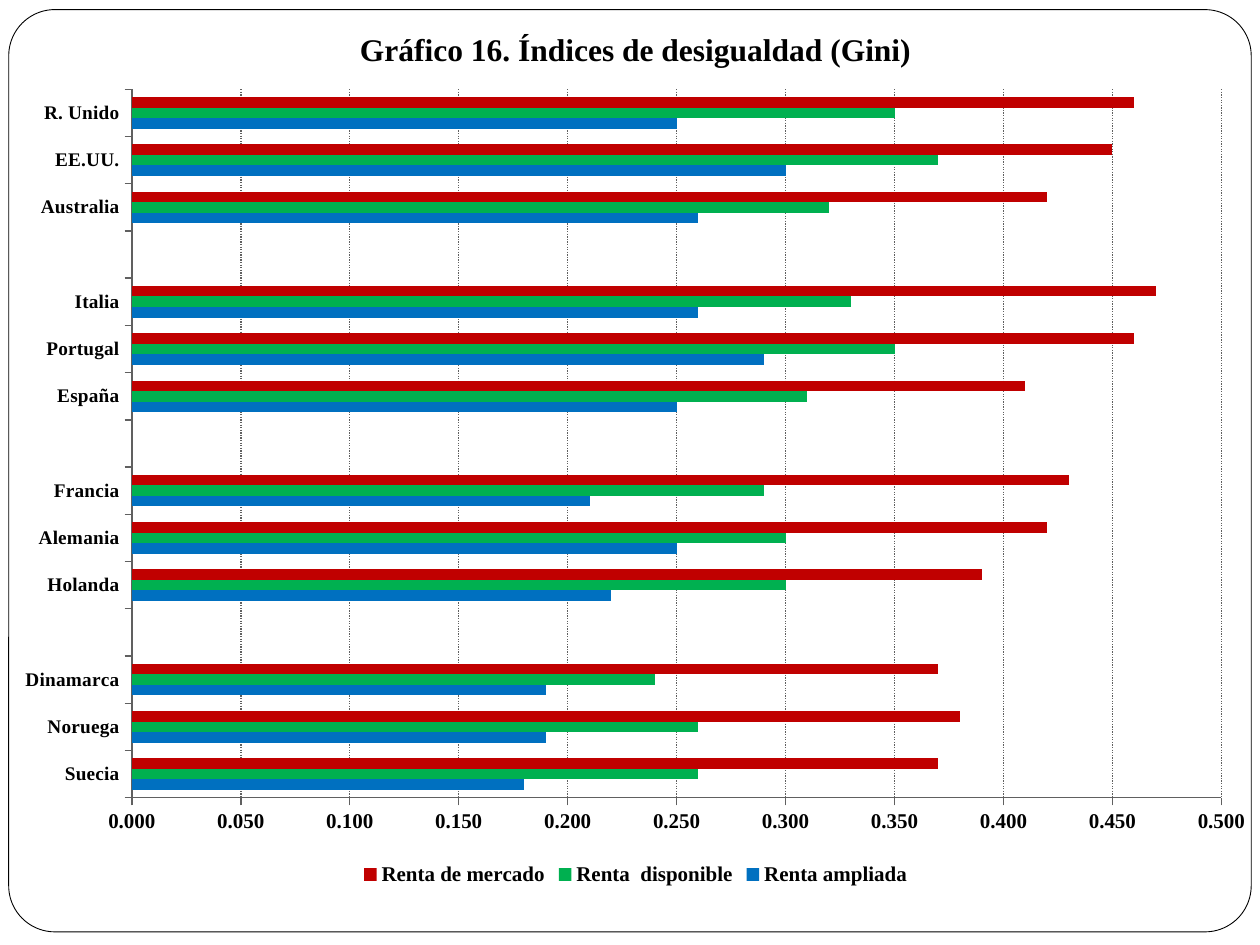
from lxml import etree
from pptx import Presentation
from pptx.chart.data import CategoryChartData
from pptx.dml.color import RGBColor
from pptx.enum.chart import XL_CHART_TYPE, XL_LEGEND_POSITION, XL_TICK_MARK
from pptx.enum.dml import MSO_LINE
from pptx.enum.shapes import MSO_SHAPE
from pptx.oxml.ns import qn
from pptx.util import Pt

TITLE = "Gráfico 16. Índices de desigualdad (Gini)"
FONT = "Times New Roman"
SERIES = [
    ("Renta ampliada", "0070C0"),
    ("Renta  disponible", "00B050"),
    ("Renta de mercado", "C00000"),
]
COUNTRIES = [
    ("Suecia", 0.18, 0.26, 0.37),
    ("Noruega", 0.19, 0.26, 0.38),
    ("Dinamarca", 0.19, 0.24, 0.37),
    ("", None, None, None),
    ("Holanda", 0.22, 0.3, 0.39),
    ("Alemania", 0.25, 0.3, 0.42),
    ("Francia", 0.21, 0.29, 0.43),
    ("", None, None, None),
    ("España", 0.25, 0.31, 0.41),
    ("Portugal", 0.29, 0.35, 0.46),
    ("Italia", 0.26, 0.33, 0.47),
    ("", None, None, None),
    ("Australia", 0.26, 0.32, 0.42),
    ("EE.UU.", 0.3, 0.37, 0.45),
    ("R. Unido", 0.25, 0.35, 0.46),
]
PLOT_LEFT, PLOT_TOP, PLOT_WIDTH, PLOT_HEIGHT = Pt(75.4), Pt(51), Pt(622.6), Pt(405)
CHART_WIDTH, CHART_HEIGHT = Pt(726.5), Pt(509)


def color(hex_code):
    """Return the colour of a hex string."""
    return RGBColor.from_string(hex_code)


def style_font(font, size, bold=True):
    """Set the chart typeface at a size and weight."""
    font.name = FONT
    font.size = Pt(size)
    font.bold = bold
    font.color.rgb = color("000000")


def style_line(line, hex_code, width):
    """Set the colour and width of a line."""
    line.color.rgb = color(hex_code)
    line.width = Pt(width)


def add_frame(slide):
    """Add the rounded frame behind the chart."""
    frame = slide.shapes.add_shape(
        MSO_SHAPE.ROUNDED_RECTANGLE, Pt(5), Pt(5.5), Pt(710), Pt(527))
    frame.adjustments[0] = 0.05
    frame.shadow.inherit = False
    frame.fill.solid()
    frame.fill.fore_color.rgb = color("FFFFFF")
    style_line(frame.line, "000000", 0.5)


def place_plot(chart):
    """Fix the inner plot area as fractions of the chart."""
    plot_area = chart.plots[0]._element.getparent()
    for old in plot_area.findall(qn("c:layout")):
        plot_area.remove(old)
    layout = etree.Element(qn("c:layout"))
    manual = etree.SubElement(layout, qn("c:manualLayout"))
    settings = {
        "layoutTarget": "inner", "xMode": "edge", "yMode": "edge",
        "x": PLOT_LEFT / CHART_WIDTH, "y": PLOT_TOP / CHART_HEIGHT,
        "w": PLOT_WIDTH / CHART_WIDTH, "h": PLOT_HEIGHT / CHART_HEIGHT,
    }
    for name, value in settings.items():
        etree.SubElement(manual, qn(f"c:{name}")).set("val", str(value))
    plot_area.insert(0, layout)


def add_gini_chart(slide):
    """Add the clustered bar chart of Gini indices."""
    data = CategoryChartData(number_format="0.000")
    data.categories = [country[0] for country in COUNTRIES]
    for index, (name, _) in enumerate(SERIES, start=1):
        data.add_series(name, [country[index] for country in COUNTRIES])
    chart = slide.shapes.add_chart(
        XL_CHART_TYPE.BAR_CLUSTERED, 0, 0, CHART_WIDTH, CHART_HEIGHT, data).chart
    style_font(chart.font, 10, False)

    chart.has_title = True
    chart.chart_title.text_frame.text = TITLE
    style_font(chart.chart_title.text_frame.paragraphs[0].runs[0].font, 18)
    chart.has_legend = True
    chart.legend.position = XL_LEGEND_POSITION.BOTTOM
    chart.legend.include_in_layout = False
    style_font(chart.legend.font, 12)

    plot = chart.plots[0]
    plot.gap_width = 150
    plot.vary_by_categories = False
    for series, (_, hex_code) in zip(plot.series, SERIES):
        series.format.fill.solid()
        series.format.fill.fore_color.rgb = color(hex_code)

    for axis, size in ((chart.category_axis, 11), (chart.value_axis, 12)):
        axis.major_tick_mark = XL_TICK_MARK.OUTSIDE
        axis.minor_tick_mark = XL_TICK_MARK.NONE
        style_font(axis.tick_labels.font, size)
        style_line(axis.format.line, "606060", 0.75)

    axis = chart.value_axis
    axis.minimum_scale, axis.maximum_scale, axis.major_unit = 0, 0.5, 0.05
    axis.tick_labels.number_format = "0.000"
    axis.tick_labels.number_format_is_linked = False
    axis.has_major_gridlines = True
    style_line(axis.major_gridlines.format.line, "606060", 0.75)
    axis.major_gridlines.format.line.dash_style = MSO_LINE.ROUND_DOT
    place_plot(chart)


def main():
    """Build and save the slide."""
    presentation = Presentation()
    presentation.slide_width, presentation.slide_height = Pt(720), Pt(540)
    slide = presentation.slides.add_slide(presentation.slide_layouts[6])
    add_frame(slide)
    add_gini_chart(slide)
    presentation.save("out.pptx")


if __name__ == "__main__":
    main()
